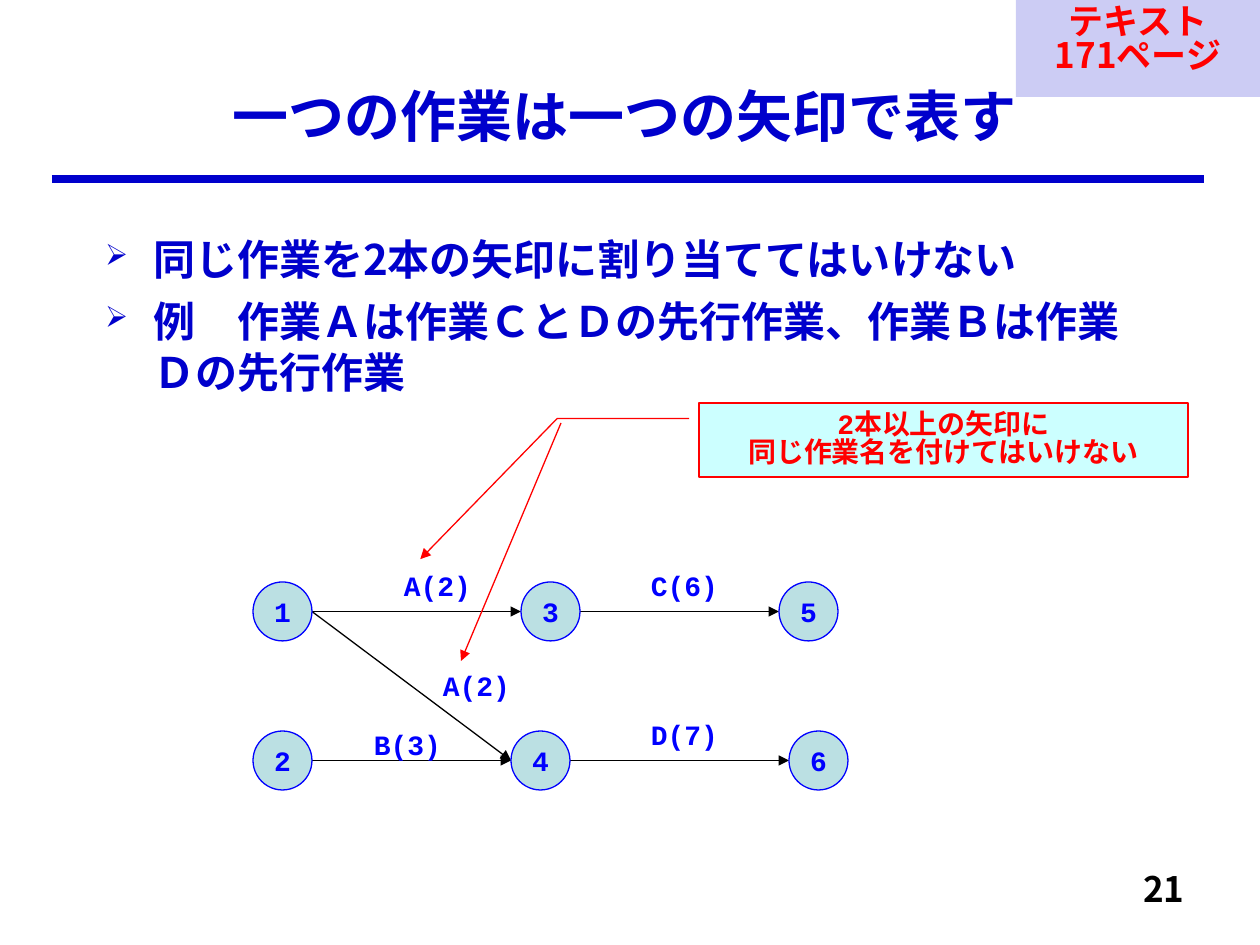
from lxml import etree
from pptx import Presentation
from pptx.dml.color import RGBColor
from pptx.enum.shapes import MSO_CONNECTOR, MSO_SHAPE
from pptx.enum.text import MSO_ANCHOR, PP_ALIGN
from pptx.oxml.ns import qn
from pptx.util import Emu, Pt

STRAIGHT = MSO_CONNECTOR.STRAIGHT
ELLIPSE, RECTANGLE, CALLOUT = MSO_SHAPE.OVAL, MSO_SHAPE.RECTANGLE, MSO_SHAPE.LINE_CALLOUT_2
TOP, MIDDLE = MSO_ANCHOR.TOP, MSO_ANCHOR.MIDDLE
LEFT, CENTER, RIGHT = PP_ALIGN.LEFT, PP_ALIGN.CENTER, PP_ALIGN.RIGHT
GOTHIC, MONO = "Noto Sans CJK JP", "Courier New"
NAVY, BLUE, RED, BLACK = "0000CC", "0000FF", "FF0000", "000000"
NODE_FILL, CALLOUT_FILL = "BBE0E3", "CCFFFF"
NODE_SIZE = 59
NODES = {"1": (253, 582), "3": (521, 582), "5": (779, 582),
         "2": (253, 731), "4": (511, 731), "6": (789, 731)}
ACTIVITIES = [("1", "3", "A(2)", 353, 562), ("1", "4", "A(2)", 392, 662),
              ("3", "5", "C(6)", 600, 562), ("2", "4", "B(3)", 323, 721),
              ("4", "6", "D(7)", 600, 711)]
RULES = ["同じ作業を2本の矢印に割り当ててはいけない",
         "例　作業Ａは作業ＣとＤの先行作業、作業Ｂは作業Ｄの先行作業"]


def px(length):
    """Turn pixels into EMU."""
    return Emu(round(length * 914400 / 126))


def rgb(code):
    """Turn a hex string into a colour."""
    return RGBColor.from_string(code)


def add_child(parent, tag, **attributes):
    """Append a DrawingML element."""
    return etree.SubElement(parent, qn(tag), attributes)


def write(shape, lines, size, color, font=GOTHIC, align=CENTER, anchor=TOP, spacing=1.0):
    """Fill a shape with bold, evenly formatted paragraphs."""
    frame = shape.text_frame
    frame.word_wrap = True
    frame.vertical_anchor = anchor
    frame.text = "\n".join(lines)
    for paragraph in frame.paragraphs:
        paragraph.alignment = align
        paragraph.line_spacing = spacing
        for run in paragraph.runs:
            run.font.size = Pt(size)
            run.font.bold = True
            run.font.name = font
            run.font.color.rgb = rgb(color)
            add_child(run.font._element, "a:ea", typeface=GOTHIC)
    return frame


def add_text(slide, box, lines, size, color, **style):
    """Add a text box."""
    return write(slide.shapes.add_textbox(*map(px, box)), lines, size, color, **style)


def add_panel(slide, kind, box, fill, outline=None):
    """Add a flat preset shape."""
    panel = slide.shapes.add_shape(kind, *map(px, box))
    panel.shadow.inherit = False
    panel.fill.solid()
    panel.fill.fore_color.rgb = rgb(fill)
    if outline:
        panel.line.color.rgb = rgb(outline)
        panel.line.width = Pt(0.75)
    else:
        panel.line.fill.background()
    return panel


def add_arrowhead(line):
    """Put a triangle at the end of a line."""
    add_child(line._get_or_add_ln(), "a:tailEnd", type="triangle")


def add_line(slide, start, end, color, width=0.75, arrow=True):
    """Add a straight line or arrow."""
    connector = slide.shapes.add_connector(STRAIGHT, *map(px, (*start, *end)))
    connector.line.color.rgb = rgb(color)
    connector.line.width = Pt(width)
    if arrow:
        add_arrowhead(connector.line)
    add_child(connector._element.spPr, "a:effectLst")


def add_title(slide, text):
    """Place the title and the rule under it."""
    title = slide.shapes.title
    title.left, title.top, title.width, title.height = map(px, (64, 63, 1121, 105))
    write(title, [text], 32, NAVY, anchor=MIDDLE)
    add_line(slide, (52, 179), (1204, 179), NAVY, 4.5, arrow=False)


def add_rules(slide):
    """Add the bulleted rules."""
    frame = add_text(slide, (60, 227, 1152, 609), RULES, 24, NAVY, align=LEFT)
    frame.margin_left, frame.margin_right = px(45), px(60)
    indent = px(48)
    for paragraph in frame.paragraphs:
        paragraph.space_before = Pt(7)
        properties = paragraph._p.get_or_add_pPr()
        properties.set("marL", str(indent))
        properties.set("indent", str(-indent))
        add_child(properties, "a:buSzPct", val="70000")
        add_child(properties, "a:buChar", char="➢")


def add_network(slide):
    """Draw the activity arrows, their labels and the numbered nodes."""
    radius = NODE_SIZE / 2
    for source, target, label, left, top in ACTIVITIES:
        (start_x, start_y), (end_x, end_y) = NODES[source], NODES[target]
        add_line(slide, (start_x + NODE_SIZE, start_y + radius), (end_x, end_y + radius), BLACK)
        add_text(slide, (left, top, 169, 47), [label], 16, BLUE, font=MONO)
    for number, corner in NODES.items():
        node = add_panel(slide, ELLIPSE, (*corner, NODE_SIZE, NODE_SIZE), NODE_FILL, BLUE)
        write(node, [number], 16, BLUE, font=MONO, anchor=MIDDLE).word_wrap = False


def add_warning(slide):
    """Add the callout that points at both arrows of activity A."""
    callout = add_panel(slide, CALLOUT, (699, 403, 489, 74), CALLOUT_FILL, RED)
    for index, value in enumerate((0.21, -0.02, 0.21, -0.29, 2.11, -0.57)):
        callout.adjustments[index] = value
    add_arrowhead(callout.line)
    write(callout, ["2本以上の矢印に", "同じ作業名を付けてはいけない"], 16, RED,
          font=MONO, anchor=MIDDLE, spacing=0.83)
    add_line(slide, (561, 423), (461, 661), RED)


def add_page_tag(slide):
    """Add the translucent textbook reference in the corner."""
    tag = add_panel(slide, RECTANGLE, (1016, 0, 244, 97), NAVY)
    color = tag._element.spPr.find(qn("a:solidFill")).find(qn("a:srgbClr"))
    add_child(color, "a:alpha", val="20000")
    write(tag, ["テキスト", "171ページ"], 20, RED, spacing=0.83)


def main():
    """Build and save the slide."""
    deck = Presentation()
    deck.slide_width, deck.slide_height = px(1260), px(945)
    slide = deck.slides.add_slide(deck.slide_layouts[5])
    add_title(slide, "一つの作業は一つの矢印で表す")
    add_text(slide, (935, 861, 262, 63), ["21"], 20, BLACK, align=RIGHT)
    add_rules(slide)
    add_network(slide)
    add_warning(slide)
    add_page_tag(slide)
    deck.save("out.pptx")


if __name__ == "__main__":
    main()
